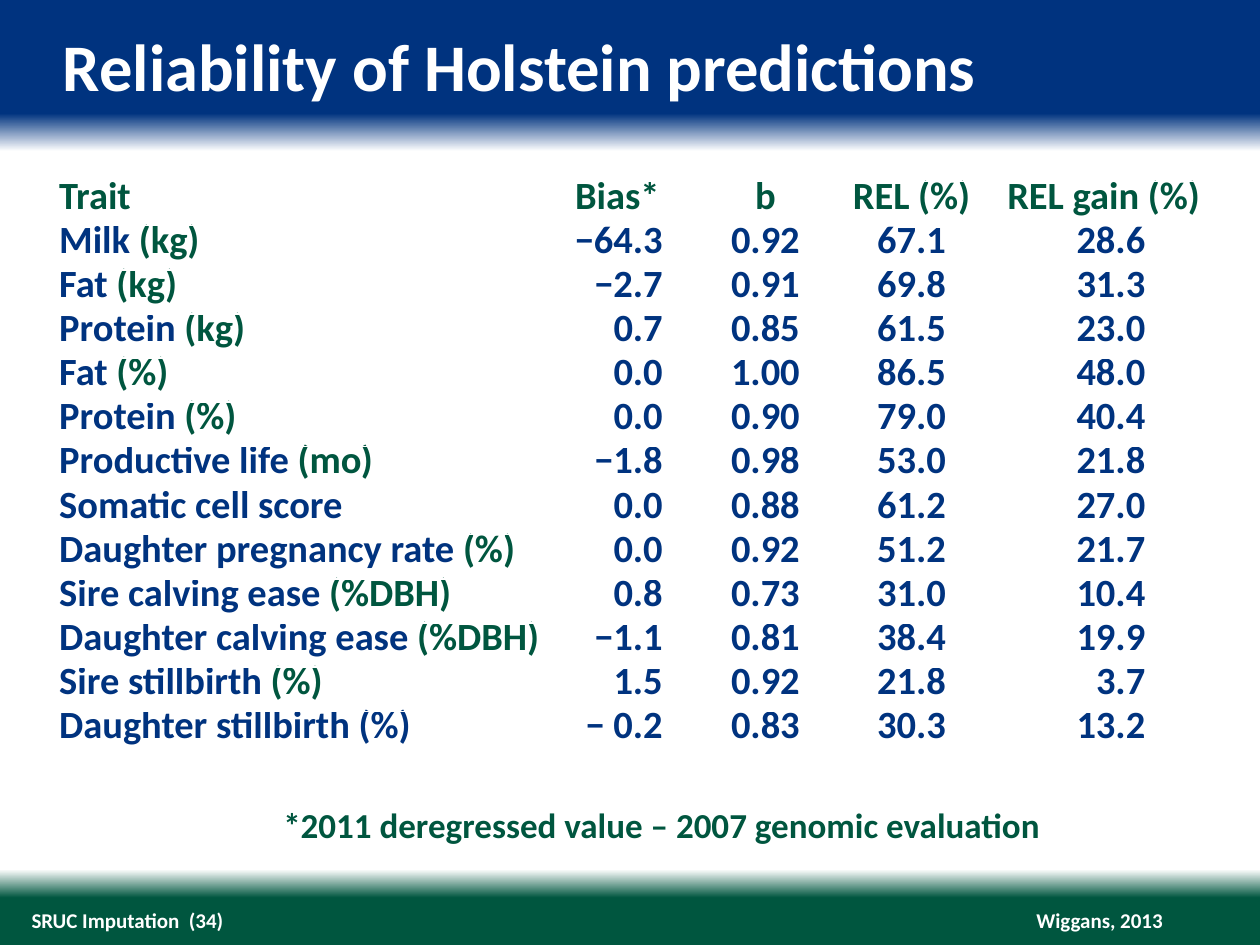
from dataclasses import dataclass

import pptx
import pptx.dml.color
import pptx.enum.text
import pptx.oxml
import pptx.oxml.ns
import pptx.util
from pptx.util import Inches

RGBColor = pptx.dml.color.RGBColor
Align = pptx.enum.text.PP_ALIGN
Anchor = pptx.enum.text.MSO_ANCHOR

BLUE = RGBColor(0x00, 0x33, 0x7F)
GREEN = RGBColor(0x00, 0x56, 0x3F)
WHITE = RGBColor(0xFF, 0xFF, 0xFF)
FONT = "Calibri"
ROW_HEIGHT = 0.35

BACKGROUND_STOPS = [(0, BLUE), (12, BLUE), (16, WHITE),
                    (92, WHITE), (95, GREEN), (100, GREEN)]


@dataclass
class Column:
    heading: str
    width: float
    align: Align
    hanging: float = 0.32
    left_inset: float = 0.1
    right_inset: float = 0.1
    heading_right_inset: float = 0.1


@dataclass
class Trait:
    name: str
    unit: str
    values: tuple[str, str, str, str]


@dataclass
class Caption:
    text: str
    box: tuple[float, float, float, float]
    size: int
    color: RGBColor
    align: Align = Align.LEFT
    anchor: Anchor = Anchor.MIDDLE
    insets: tuple[float, float] = (0, 0)
    wrap: bool = True


COLUMNS = [
    Column("Trait", 4.07, Align.LEFT),
    Column("Bias*", 0.92, Align.RIGHT, hanging=0.38),
    Column("b", 1.23, Align.CENTER, hanging=0, left_inset=0.2,
           right_inset=0, heading_right_inset=0),
    Column("REL (%)", 1.29, Align.CENTER),
    Column("REL gain (%)", 1.76, Align.RIGHT, hanging=0.38, right_inset=0.55),
]

TRAITS = [
    Trait("Milk ", "(kg)", ("−64.3", "0.92", "67.1", "28.6")),
    Trait("Fat ", "(kg)", ("−2.7", "0.91", "69.8", "31.3")),
    Trait("Protein ", "(kg)", ("0.7", "0.85", "61.5", "23.0")),
    Trait("Fat ", "(%)", ("0.0", "1.00", "86.5", "48.0")),
    Trait("Protein ", "(%)", ("0.0", "0.90", "79.0", "40.4")),
    Trait("Productive life ", "(mo)", ("−1.8", "0.98", "53.0", "21.8")),
    Trait("Somatic cell score", "", ("0.0", "0.88", "61.2", "27.0")),
    Trait("Daughter pregnancy rate ", "(%)", ("0.0", "0.92", "51.2", "21.7")),
    Trait("Sire calving ease ", "(%DBH)", ("0.8", "0.73", "31.0", "10.4")),
    Trait("Daughter calving ease ", "(%DBH)", ("−1.1", "0.81", "38.4", "19.9")),
    Trait("Sire stillbirth ", "(%)", ("1.5", "0.92", "21.8", "3.7")),
    Trait("Daughter stillbirth (%)", "", ("− 0.2", "0.83", "30.3", "13.2")),
]

CAPTIONS = [
    Caption("Wiggans, 2013", (8.21, 7.2, 1.02, 0.2), 12, WHITE,
            align=Align.RIGHT, wrap=False),
    Caption("SRUC Imputation  (34)", (0.25, 7.2, 5.22, 0.2), 12, WHITE),
    Caption("Reliability of Holstein predictions", (0.5, 0.2, 9, 0.6), 38,
            WHITE, anchor=Anchor.TOP),
    Caption("*2011 deregressed value – 2007 genomic evaluation",
            (2.15, 6.32, 6.26, 0.44), 20, GREEN, insets=(0.1, 0.05), wrap=False),
]


def format_run(run, size: int, color: RGBColor) -> None:
    run.font.name = FONT
    run.font.size = pptx.util.Pt(size)
    run.font.bold = True
    run.font.color.rgb = color


def paint_background(slide) -> None:
    fill = slide.background.fill
    fill.gradient()
    fill.gradient_angle = 270
    stops = slide.element.find(".//" + pptx.oxml.ns.qn("a:gsLst"))
    for stop in list(stops):
        stops.remove(stop)
    for percent, color in BACKGROUND_STOPS:
        stops.append(pptx.oxml.parse_xml(
            f'<a:gs {pptx.oxml.ns.nsdecls("a")} pos="{percent * 1000}">'
            f'<a:srgbClr val="{color}"/></a:gs>'))


def add_caption(slide, caption: Caption) -> None:
    frame = slide.shapes.add_textbox(*map(Inches, caption.box)).text_frame
    frame.word_wrap = caption.wrap
    frame.vertical_anchor = caption.anchor
    frame.margin_left = frame.margin_right = Inches(caption.insets[0])
    frame.margin_top = frame.margin_bottom = Inches(caption.insets[1])
    paragraph = frame.paragraphs[0]
    paragraph.text = caption.text
    paragraph.alignment = caption.align
    format_run(paragraph.runs[0], caption.size, caption.color)


def add_bottom_rule(cell) -> None:
    rule = pptx.oxml.parse_xml(
        f'<a:lnB {pptx.oxml.ns.nsdecls("a")} w="12700"><a:solidFill>'
        f'<a:srgbClr val="{WHITE}"/></a:solidFill></a:lnB>')
    cell._tc.get_or_add_tcPr().insert(0, rule)


def fill_cell(cell, column: Column, pieces: list[tuple[str, RGBColor]],
              heading: bool) -> None:
    cell.fill.background()
    cell.margin_left = Inches(column.left_inset)
    cell.margin_right = Inches(
        column.heading_right_inset if heading else column.right_inset)
    cell.vertical_anchor = Anchor.BOTTOM if heading else Anchor.TOP
    paragraph = cell.text_frame.paragraphs[0]
    centered = heading and column.align != Align.LEFT
    paragraph.alignment = Align.CENTER if centered else column.align
    paragraph.line_spacing = pptx.util.Pt(18)
    hanging = min(column.hanging, 0.32) if heading else column.hanging
    properties = paragraph._p.get_or_add_pPr()
    properties.set("marL", str(Inches(hanging)))
    properties.set("indent", str(-Inches(hanging)))
    for text, color in pieces:
        run = paragraph.add_run()
        run.text = text
        format_run(run, 22, color)


def add_reliability_table(slide) -> None:
    row_count = len(TRAITS) + 1
    table = slide.shapes.add_table(
        row_count, len(COLUMNS), Inches(0.37), Inches(1.44),
        Inches(sum(column.width for column in COLUMNS)),
        Inches(ROW_HEIGHT * row_count)).table
    table.first_row = False
    table.horz_banding = False
    for row in table.rows:
        row.height = Inches(ROW_HEIGHT)
    for index, column in enumerate(COLUMNS):
        table.columns[index].width = Inches(column.width)
        fill_cell(table.cell(0, index), column, [(column.heading, GREEN)], True)
        for row_index, trait in enumerate(TRAITS, start=1):
            if index > 0:
                pieces = [(trait.values[index - 1], BLUE)]
            else:
                pieces = [(trait.name, BLUE)]
                if trait.unit:
                    pieces.append((trait.unit, GREEN))
            fill_cell(table.cell(row_index, index), column, pieces, False)
        for ruled_row in (0, row_count - 1):
            add_bottom_rule(table.cell(ruled_row, index))


def main() -> None:
    presentation = pptx.Presentation()
    presentation.slide_width = Inches(10)
    presentation.slide_height = Inches(7.5)
    slide = presentation.slides.add_slide(presentation.slide_layouts[6])

    # Blue header and green footer bands
    paint_background(slide)

    # Footer, title and footnote
    for caption in CAPTIONS:
        add_caption(slide, caption)

    # Traits with bias, regression and reliability
    add_reliability_table(slide)

    presentation.save("out.pptx")


if __name__ == "__main__":
    main()
